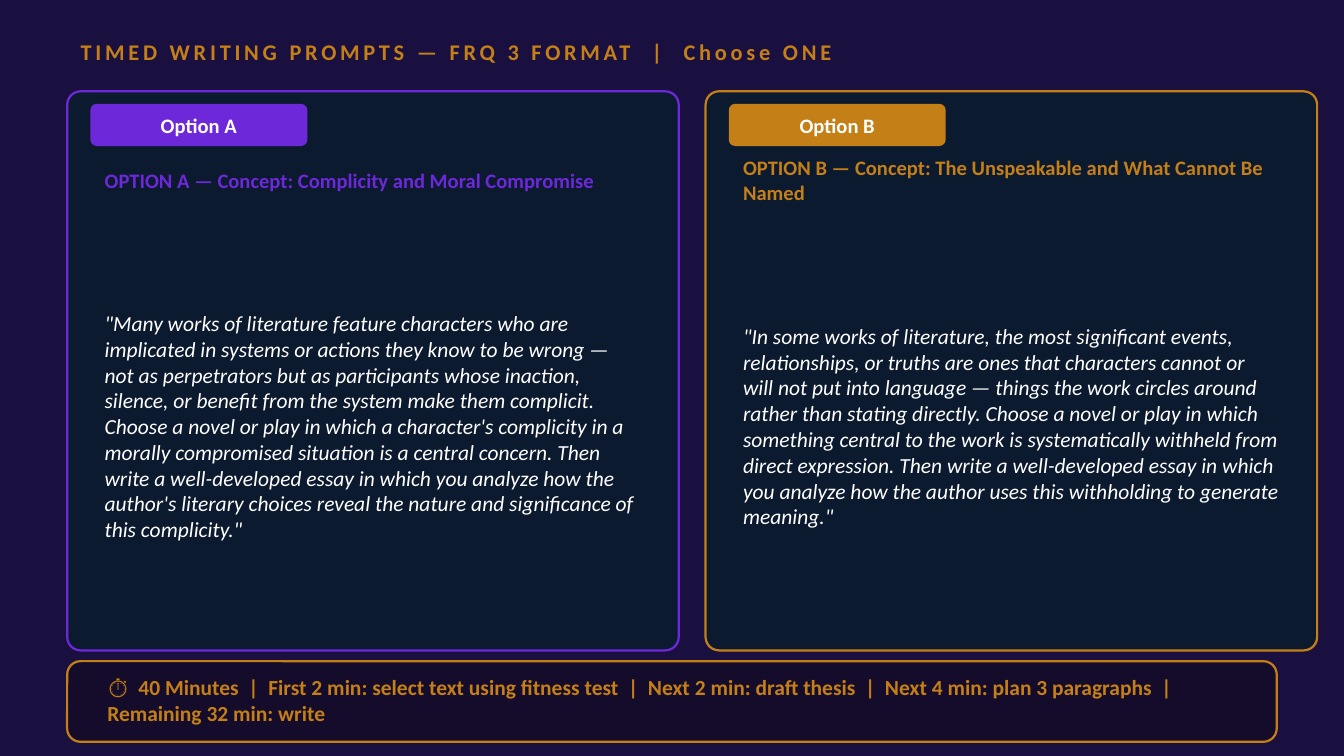
from dataclasses import dataclass

from pptx import Presentation
from pptx.dml.color import RGBColor
from pptx.enum import shapes, text
from pptx.util import Pt

PX = 4572


@dataclass(frozen=True)
class Theme:
    font: str = "Calibri"
    night: str = "1A1040"
    panel: str = "0C1A30"
    timer: str = "140C2A"
    gold: str = "C47F17"
    violet: str = "6D28D9"
    white: str = "FFFFFF"
    title_size: float = 12
    label_size: float = 11
    body_size: float = 11.5


theme = Theme()


def add_panel(page, bounds, radius, fill, line, width):
    panel = page.shapes.add_shape(
        shapes.MSO_SHAPE.ROUNDED_RECTANGLE, *[n * PX for n in bounds])
    panel.adjustments[0] = radius / min(bounds[2:])
    panel.shadow.inherit = False
    panel.fill.solid()
    panel.fill.fore_color.rgb = RGBColor.from_string(fill)
    panel.line.color.rgb = RGBColor.from_string(line)
    panel.line.width = Pt(width)
    return panel


def write(box, words, size, color, bold=False, italic=False,
          align=text.PP_ALIGN.LEFT):
    frame = box.text_frame
    frame.text = words
    frame.word_wrap = True
    frame.auto_size = text.MSO_AUTO_SIZE.NONE
    frame.vertical_anchor = text.MSO_ANCHOR.MIDDLE
    paragraph = frame.paragraphs[0]
    paragraph.alignment = align
    span = paragraph.runs[0]
    span.font.name = theme.font
    span.font.size = Pt(size)
    span.font.bold = bold
    span.font.italic = italic
    span.font.color.rgb = RGBColor.from_string(color)
    return span


deck = Presentation()
deck.slide_width, deck.slide_height = 2000 * PX, 1125 * PX
page = deck.slides.add_slide(deck.slide_layouts[5])
page.background.fill.solid()
page.background.fill.fore_color.rgb = RGBColor.from_string(theme.night)

title = page.shapes.title
title.left, title.top, title.width, title.height = [
    n * PX for n in (100, 36, 1800, 80)]
title_span = write(title, "TIMED WRITING PROMPTS — FRQ 3 FORMAT  |  Choose ONE",
                   theme.title_size, theme.gold, bold=True)
title_span.font._element.set("spc", "200")

options = [
    ("Option A", theme.violet,
     "OPTION A — Concept: Complicity and Moral Compromise",
     "\"Many works of literature feature characters who are implicated in "
     "systems or actions they know to be wrong — not as perpetrators but as "
     "participants whose inaction, silence, or benefit from the system make "
     "them complicit. Choose a novel or play in which a character's complicity "
     "in a morally compromised situation is a central concern. Then write a "
     "well-developed essay in which you analyze how the author's literary "
     "choices reveal the nature and significance of this complicity.\""),
    ("Option B", theme.gold,
     "OPTION B — Concept: The Unspeakable and What Cannot Be Named",
     "\"In some works of literature, the most significant events, "
     "relationships, or truths are ones that characters cannot or will not put "
     "into language — things the work circles around rather than stating "
     "directly. Choose a novel or play in which something central to the work "
     "is systematically withheld from direct expression. Then write a "
     "well-developed essay in which you analyze how the author uses this "
     "withholding to generate meaning.\""),
]

for index, (label, accent, concept, prompt) in enumerate(options):
    left = 100 + index * 950
    inner = left + 36
    add_panel(page, (left, 136, 910, 832), 20, theme.panel, accent, 1.2)
    badge = add_panel(page, (inner, 156, 320, 60), 8, accent, accent, 1)
    write(badge, label, theme.label_size, theme.white, bold=True,
          align=text.PP_ALIGN.CENTER)
    heading = page.shapes.add_textbox(inner * PX, 232 * PX, 838 * PX, 72 * PX)
    write(heading, concept, theme.label_size, accent, bold=True)
    body = page.shapes.add_textbox(inner * PX, 316 * PX, 838 * PX, 636 * PX)
    write(body, prompt, theme.body_size, theme.white, italic=True)

add_panel(page, (100, 984, 1800, 120), 20, theme.timer, theme.gold, 1.2)
timing = page.shapes.add_textbox(140 * PX, 992 * PX, 1720 * PX, 100 * PX)
write(timing,
      "⏱  40 Minutes  |  First 2 min: select text using fitness test  |  "
      "Next 2 min: draft thesis  |  Next 4 min: plan 3 paragraphs  |  "
      "Remaining 32 min: write",
      theme.body_size, theme.gold, bold=True)

deck.save("out.pptx")
